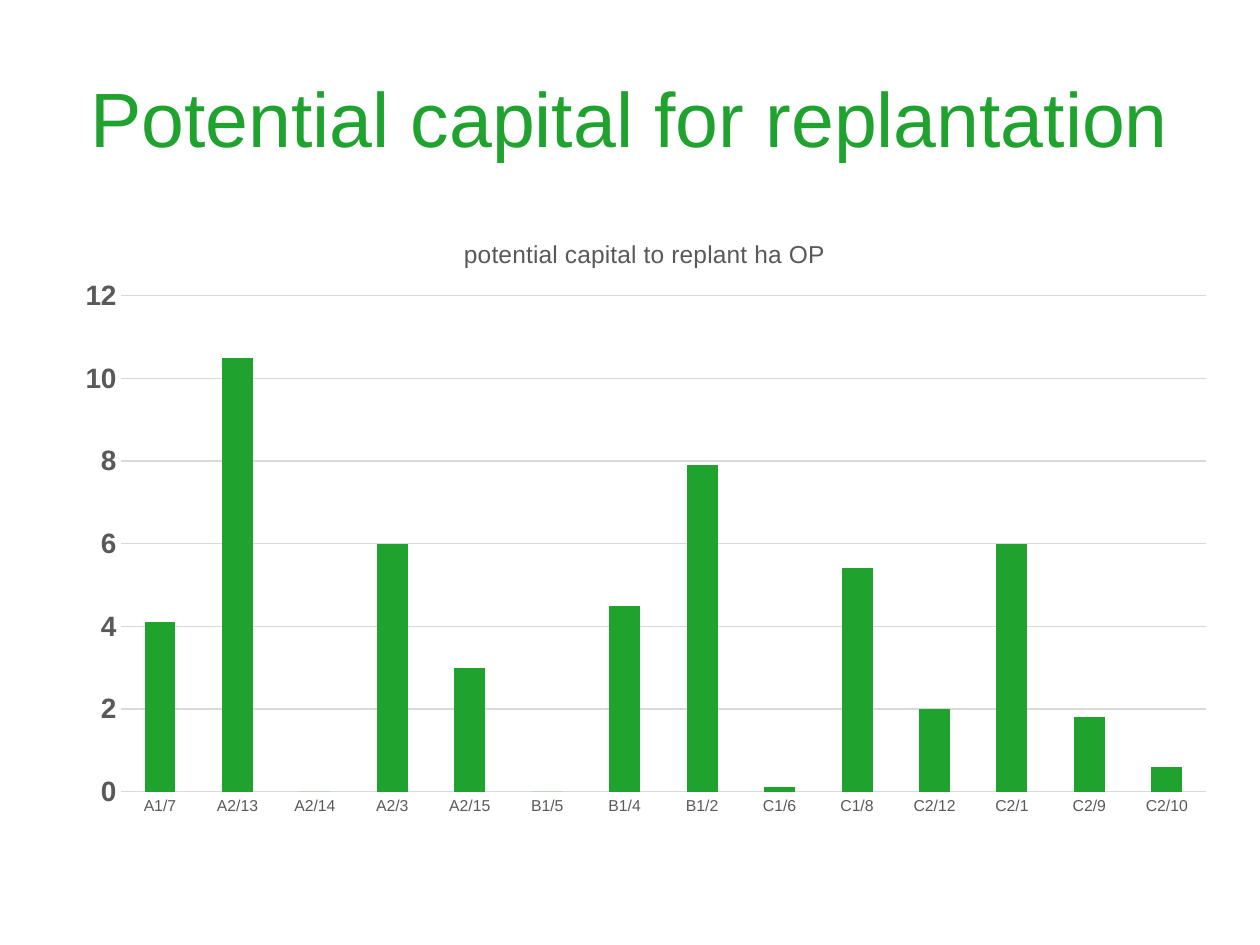
"""Build a slide with a column chart of potential capital for replantation."""
from lxml.etree import SubElement
from pptx import Presentation
from pptx.chart.data import CategoryChartData
from pptx.dml.color import RGBColor
from pptx.enum.chart import XL_CHART_TYPE, XL_TICK_MARK
from pptx.enum.text import MSO_ANCHOR, PP_ALIGN
from pptx.oxml.ns import qn
from pptx.util import Pt

PX = 914400 / 126
GREEN, GREY, PALE = "1FA22E", "595959", "D9D9D9"
DATA = {
    "A1/7": 4.1, "A2/13": 10.5, "A2/14": 0, "A2/3": 6, "A2/15": 3,
    "B1/5": 0, "B1/4": 4.5, "B1/2": 7.9, "C1/6": 0.1, "C1/8": 5.4,
    "C2/12": 2, "C2/1": 6, "C2/9": 1.8, "C2/10": 0.6,
}


def tint(code):
    return RGBColor.from_string(code)


def write(frame, text, size, color, bold=False):
    frame.text = text
    para = frame.paragraphs[0]
    para.alignment = PP_ALIGN.CENTER
    font = para.runs[0].font
    font.name, font.size, font.bold = "Arial", Pt(size), bold
    font.color.rgb = tint(color)


deck = Presentation()
deck.slide_width, deck.slide_height = round(1260 * PX), round(945 * PX)
slide = deck.slides.add_slide(deck.slide_layouts[5])
slide.background.fill.solid()
slide.background.fill.fore_color.rgb = tint("FFFFFF")

title = slide.shapes.title
title.left, title.top, title.width, title.height = [
    round(n * PX) for n in (63, 38, 1134, 157)]
title.text_frame.vertical_anchor = MSO_ANCHOR.MIDDLE
write(title.text_frame, "Potential capital for replantation", size=44, color=GREEN)

data = CategoryChartData()
data.categories = list(DATA)
data.add_series("Series 1", list(DATA.values()))
box = [round(n * PX) for n in (63, 209, 1166, 620)]
chart = slide.shapes.add_chart(XL_CHART_TYPE.COLUMN_CLUSTERED, *box, data).chart
chart.has_legend = False
chart.font.name, chart.font.size = "Arial", Pt(10)
chart.has_title = True
write(chart.chart_title.text_frame, "potential capital to replant ha OP",
      size=14, color=GREY)

plot = chart.plots[0]
plot.gap_width = 150
plot.vary_by_categories = False
bars = plot.series[0]
bars.invert_if_negative = False
bars.format.fill.solid()
bars.format.fill.fore_color.rgb = tint(GREEN)

for axis, size, bold in ((chart.category_axis, 9, False), (chart.value_axis, 16, True)):
    axis.major_tick_mark = axis.minor_tick_mark = XL_TICK_MARK.NONE
    axis.format.line.fill.background()
    font = axis.tick_labels.font
    font.name, font.size, font.bold = "Arial", Pt(size), bold
    font.color.rgb = tint(GREY)

scale = chart.value_axis
scale.minimum_scale, scale.maximum_scale, scale.major_unit = 0, 12, 2
scale.tick_labels.number_format = "#,##0"
scale.tick_labels.number_format_is_linked = False
scale.has_major_gridlines = True
grid = scale.major_gridlines.format.line
grid.width = Pt(0.75)
grid.color.rgb = tint(PALE)

head = chart.chart_title._element
area = head.getparent().find(qn("c:plotArea"))
spots = (
    (head, 1, {"xMode": "edge", "yMode": "edge", "x": 0.34, "y": 0.04}),
    (area, 0, {"layoutTarget": "inner", "xMode": "edge", "yMode": "edge",
               "x": 0.05, "y": 0.14, "w": 0.93, "h": 0.8}),
)
for part, place, rules in spots:
    for old in part.findall(qn("c:layout")):
        part.remove(old)
    layout = SubElement(part, qn("c:layout"))
    part.insert(place, layout)
    manual = SubElement(layout, qn("c:manualLayout"))
    for key, value in rules.items():
        SubElement(manual, qn(f"c:{key}")).set("val", str(value))

deck.save("out.pptx")
